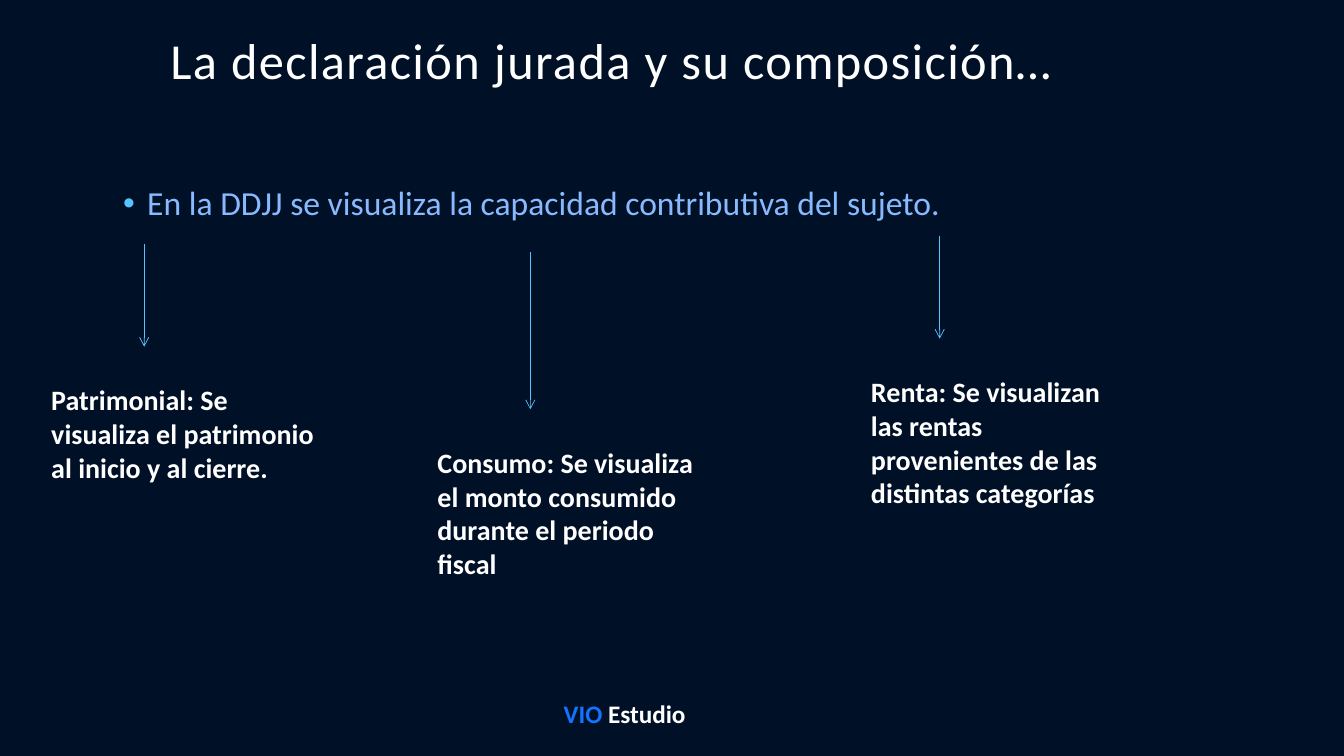
from lxml import etree
from pptx import Presentation
from pptx.dml.color import RGBColor
from pptx.enum.shapes import MSO_CONNECTOR
from pptx.enum.text import MSO_ANCHOR, MSO_AUTO_SIZE, PP_ALIGN
from pptx.oxml.ns import qn
from pptx.util import Inches, Pt

COLORS = {
    "background": "001027",
    "text": "FFFFFF",
    "body": "89BAFF",
    "accent": "56C5FF",
    "brand": "1474FF",
}
FONT = "Calibri"

# Left, top, arrow length and text of each component
COMPONENTS = [
    (0.41, 2.42, 1.02, "Patrimonial: Se visualiza el patrimonio al inicio y al cierre."),
    (8.3, 2.34, 1.02, "Renta: Se visualizan las rentas provenientes de las distintas categorías"),
    (4.24, 2.5, 1.56, "Consumo: Se visualiza el monto consumido durante el periodo fiscal"),
]
ARROW_OFFSET = 1.02
TEXT_GAP = 0.31


def color(name):
    return RGBColor.from_string(COLORS[name])


def place(shape, left, top, width, height):
    shape.left, shape.top = Inches(left), Inches(top)
    shape.width, shape.height = Inches(width), Inches(height)


def add_run(paragraph, text, size, color_name, bold=False):
    run = paragraph.add_run()
    run.text = text
    run.font.name = FONT
    run.font.size = Pt(size)
    run.font.bold = bold
    run.font.color.rgb = color(color_name)
    return run


def prepare_placeholder(shape):
    frame = shape.text_frame
    frame.word_wrap = True
    frame.auto_size = MSO_AUTO_SIZE.NONE
    frame.vertical_anchor = MSO_ANCHOR.TOP
    paragraph = frame.paragraphs[0]
    paragraph.alignment = PP_ALIGN.LEFT
    paragraph.line_spacing = 0.9
    paragraph.space_before = Pt(0)
    return paragraph


def add_text_box(slide, left, top, width, height):
    box = slide.shapes.add_textbox(*map(Inches, (left, top, width, height)))
    box.text_frame.word_wrap = True
    box.text_frame.auto_size = MSO_AUTO_SIZE.SHAPE_TO_FIT_TEXT
    return box.text_frame.paragraphs[0]


def add_title(slide, left, top, width, height):
    title = slide.shapes.title
    place(title, left, top, width, height)
    paragraph = prepare_placeholder(title)
    run = add_run(paragraph, "La declaración jurada y su composición…", 36, "text")
    run.font._element.set("spc", "100")


def add_statement(slide, left, top, width, height):
    body = slide.placeholders[1]
    place(body, left, top, width, height)
    paragraph = prepare_placeholder(body)
    properties = paragraph._p.get_or_add_pPr()
    properties.set("marL", str(Inches(0.24)))
    properties.set("indent", str(Inches(-0.24)))
    bullet_color = etree.SubElement(properties, qn("a:buClr"))
    etree.SubElement(bullet_color, qn("a:srgbClr"), val=COLORS["accent"])
    etree.SubElement(properties, qn("a:buFont"), typeface="Arial")
    etree.SubElement(properties, qn("a:buChar"), char="•")
    add_run(paragraph, "En la DDJJ se visualiza la capacidad contributiva del sujeto.", 24, "body")


def add_arrow(slide, x, top, length):
    arrow = slide.shapes.add_connector(
        MSO_CONNECTOR.STRAIGHT, Inches(x), Inches(top), Inches(x), Inches(top + length))
    arrow.line.color.rgb = color("accent")
    arrow.line.width = Pt(0.5)
    etree.SubElement(arrow.line._get_or_add_ln(), qn("a:tailEnd"), type="arrow")
    etree.SubElement(arrow._element.spPr, qn("a:effectLst"))


def add_component(slide, left, top, arrow_length, text):
    # The arrow points down to the description; the outer right one sits further in
    text_left = left + 0.24 if left > 8 else left
    add_arrow(slide, left + ARROW_OFFSET, top, arrow_length)
    paragraph = add_text_box(slide, text_left, top + arrow_length + TEXT_GAP, 2.81, 1.45)
    add_run(paragraph, text, 20, "text", bold=True)


def add_signature(slide, left, top, width, height):
    paragraph = add_text_box(slide, left, top, width, height)
    paragraph.alignment = PP_ALIGN.CENTER
    add_run(paragraph, "VIO", 18, "brand", bold=True)
    add_run(paragraph, " Estudio", 18, "text", bold=True)


def main():
    presentation = Presentation()
    presentation.slide_width = Inches(13.33)
    presentation.slide_height = Inches(7.5)
    slide = presentation.slides.add_slide(presentation.slide_layouts[1])
    slide.background.fill.solid()
    slide.background.fill.fore_color.rgb = color("background")

    add_title(slide, 1.59, 0.31, 10, 1.5)
    add_statement(slide, 1.12, 1.8, 9.5, 0.67)
    for component in COMPONENTS:
        add_component(slide, *component)
    add_signature(slide, 4.4, 6.88, 3.59, 0.4)
    presentation.save("out.pptx")


if __name__ == "__main__":
    main()
